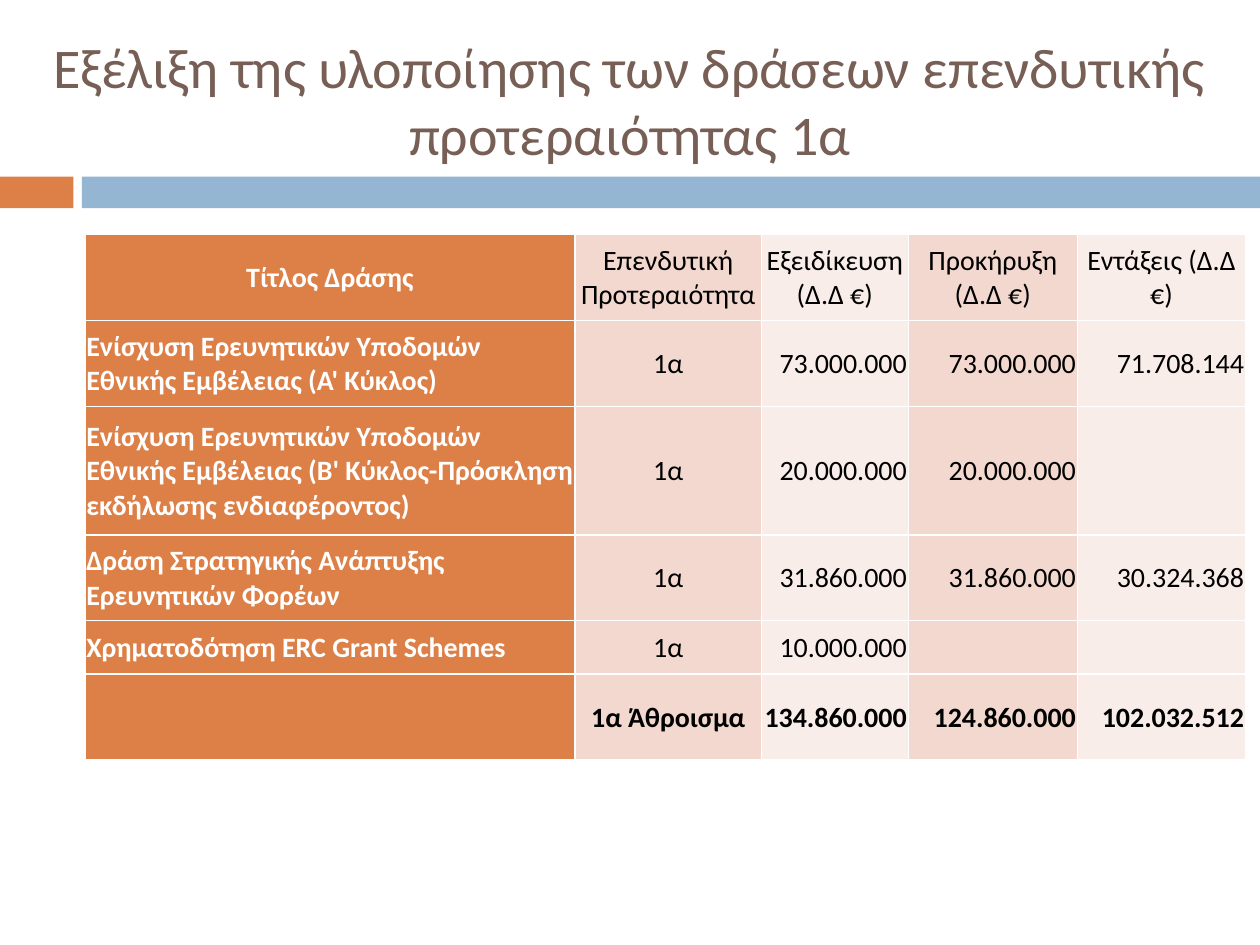
from dataclasses import dataclass

from lxml import etree
from pptx import Presentation
from pptx.dml.color import RGBColor
from pptx.enum.shapes import MSO_SHAPE
from pptx.enum.text import MSO_ANCHOR, PP_ALIGN
from pptx.oxml.ns import qn
from pptx.util import Cm, Pt

RECTANGLE = MSO_SHAPE.RECTANGLE
MIDDLE = MSO_ANCHOR.MIDDLE
LEFT, CENTER, RIGHT = PP_ALIGN.LEFT, PP_ALIGN.CENTER, PP_ALIGN.RIGHT


@dataclass(frozen=True)
class Theme:
    font: str = "Calibri"
    title_size: int = 32
    table_size: int = 16
    border_width: int = 1
    title: str = "775F55"
    orange: str = "DD8047"
    blue: str = "94B6D2"
    band_dark: str = "F2D8CF"
    band_light: str = "F9EDE9"
    white: str = "FFFFFF"
    black: str = "000000"


THEME = Theme()
SLIDE_WIDTH, SLIDE_HEIGHT = 25.4, 19.05
TITLE = "Εξέλιξη της υλοποίησης των δράσεων επενδυτικής προτεραιότητας 1α"
COLUMN_WIDTHS = (9.88, 3.76, 2.96, 3.41, 3.39)
ROW_HEIGHTS = (1.73, 1.73, 2.59, 1.73, 1.08, 1.73)
ACTIONS = (
    ("Τίτλος Δράσης", "Επενδυτική Προτεραιότητα", "Εξειδίκευση (Δ.Δ €)",
     "Προκήρυξη (Δ.Δ €)", "Εντάξεις (Δ.Δ €)"),
    ("Ενίσχυση Ερευνητικών Υποδομών Εθνικής Εμβέλειας (Α' Κύκλος)",
     "1α", "73.000.000", "73.000.000", "71.708.144"),
    ("Ενίσχυση Ερευνητικών Υποδομών Εθνικής Εμβέλειας "
     "(Β' Κύκλος-Πρόσκληση εκδήλωσης ενδιαφέροντος)",
     "1α", "20.000.000", "20.000.000", ""),
    ("Δράση Στρατηγικής Ανάπτυξης Ερευνητικών Φορέων",
     "1α", "31.860.000", "31.860.000", "30.324.368"),
    ("Χρηματοδότηση ERC Grant Schemes", "1α", "10.000.000", "", ""),
    ("", "1α Άθροισμα", "134.860.000", "124.860.000", "102.032.512"),
)


def write(frame, text, *, size, color, bold=False, align=LEFT):
    frame.word_wrap = True
    paragraph = frame.paragraphs[0]
    paragraph.alignment = align
    if not text:
        paragraph.font.size = Pt(size)
        return
    run = paragraph.add_run()
    run.text = text
    run.font.name = THEME.font
    run.font.size = Pt(size)
    run.font.bold = bold
    run.font.color.rgb = RGBColor.from_string(color)


def add_title(slide, left, top, width, height):
    title = slide.shapes.add_textbox(Cm(left), Cm(top), Cm(width), Cm(height))
    title.text_frame.vertical_anchor = MIDDLE
    write(title.text_frame, TITLE, size=THEME.title_size, color=THEME.title,
          align=CENTER)


def add_divider(slide, left, top, width, height):
    """Short orange block, a gap, then a blue band to the right edge."""
    accent, gap = 1.48, 0.17
    band_offset = accent + gap
    for offset, length, color in ((0, accent, THEME.orange),
                                  (band_offset, width - band_offset, THEME.blue)):
        bar = slide.shapes.add_shape(RECTANGLE, Cm(left + offset), Cm(top),
                                     Cm(length), Cm(height))
        bar.shadow.inherit = False
        bar.fill.solid()
        bar.fill.fore_color.rgb = RGBColor.from_string(color)
        bar.line.fill.background()


def add_borders(cell):
    properties = cell._tc.get_or_add_tcPr()
    for position, side in enumerate(("lnL", "lnR", "lnT", "lnB")):
        line = etree.Element(qn(f"a:{side}"), w=str(Pt(THEME.border_width)))
        fill = etree.SubElement(line, qn("a:solidFill"))
        etree.SubElement(fill, qn("a:srgbClr"), val=THEME.white)
        properties.insert(position, line)


def column_fill(column):
    if column == 0:
        return THEME.orange
    return THEME.band_dark if column % 2 else THEME.band_light


def cell_alignment(row, column):
    if row == 0 or column == 1:
        return CENTER
    return LEFT if column == 0 else RIGHT


def add_actions_table(slide, left, top):
    table = slide.shapes.add_table(
        len(ROW_HEIGHTS), len(COLUMN_WIDTHS), Cm(left), Cm(top),
        Cm(sum(COLUMN_WIDTHS)), Cm(sum(ROW_HEIGHTS))).table
    for column, width in zip(table.columns, COLUMN_WIDTHS):
        column.width = Cm(width)
    for row, height in zip(table.rows, ROW_HEIGHTS):
        row.height = Cm(height)

    total_row = len(ACTIONS) - 1
    for r, action in enumerate(ACTIONS):
        for c, text in enumerate(action):
            cell = table.cell(r, c)
            cell.vertical_anchor = MIDDLE
            cell.margin_left = cell.margin_right = cell.margin_top = Cm(0.03)
            cell.margin_bottom = 0
            cell.fill.solid()
            cell.fill.fore_color.rgb = RGBColor.from_string(column_fill(c))
            add_borders(cell)
            write(cell.text_frame, text, size=THEME.table_size,
                  color=THEME.black if c else THEME.white,
                  bold=c == 0 or r == total_row, align=cell_alignment(r, c))


def main():
    presentation = Presentation()
    presentation.slide_width = Cm(SLIDE_WIDTH)
    presentation.slide_height = Cm(SLIDE_HEIGHT)
    slide = presentation.slides.add_slide(presentation.slide_layouts[6])
    add_divider(slide, 0, 3.56, SLIDE_WIDTH, 0.64)
    add_title(slide, 0, 0.64, SLIDE_WIDTH, 2.74)
    add_actions_table(slide, 1.71, 4.73)
    presentation.save("out.pptx")


if __name__ == "__main__":
    main()
